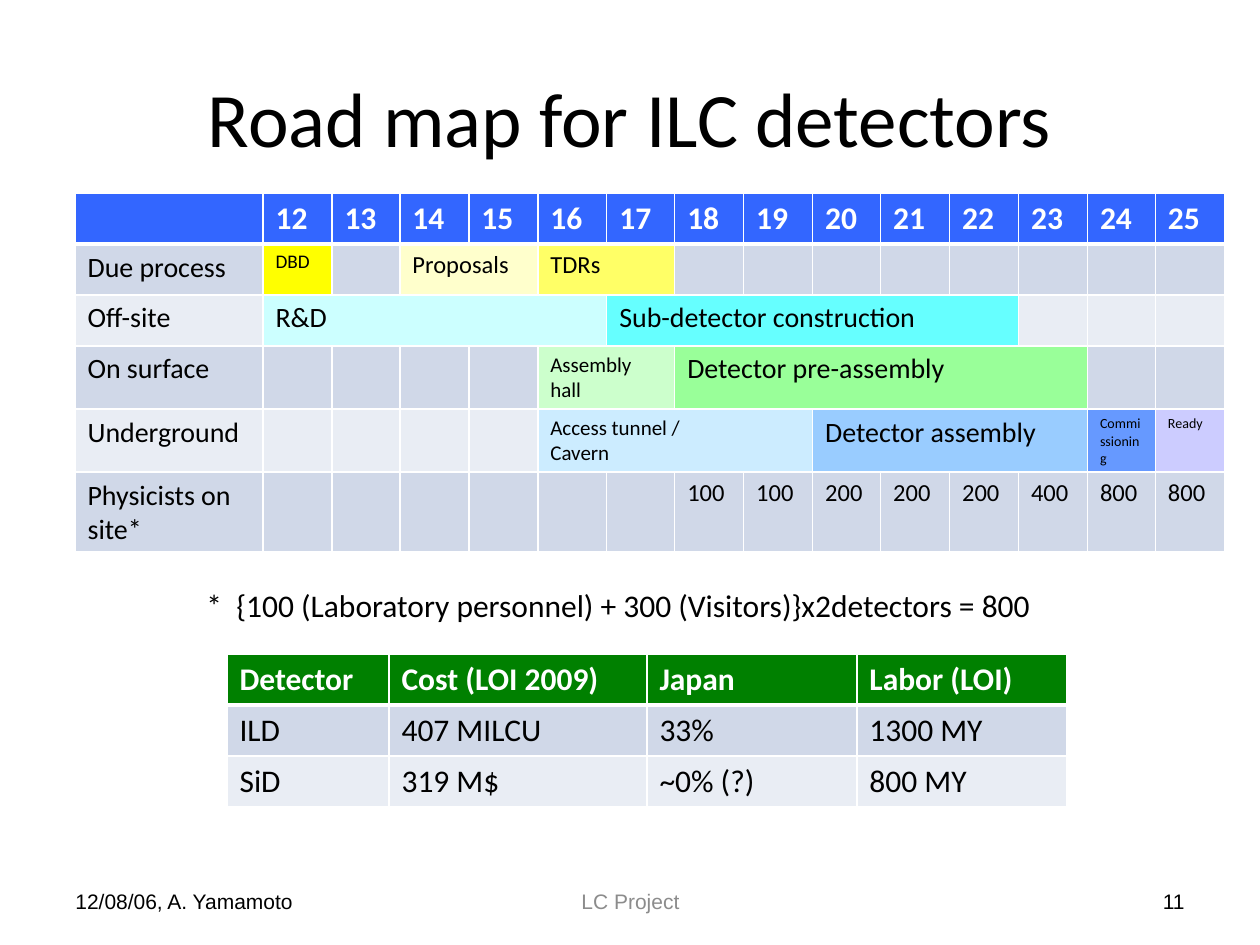
from pptx import Presentation
from pptx.dml.color import RGBColor
from pptx.enum.text import MSO_ANCHOR, PP_ALIGN
from pptx.oxml.ns import qn
from pptx.util import Pt
from lxml.etree import SubElement

EMU_PER_PX = 914400 / 126
COLORS = {
    "white": "FFFFFF", "black": "000000", "grey": "8C8C8C",
    "blue": "3366FF", "green": "008000",
    "band_dark": "D0D8E8", "band_light": "E9EDF4",
    "dbd": "FFFF00", "proposals": "FFFFCC", "tdrs": "FFFF66",
    "rd": "CCFFFF", "construction": "66FFFF",
    "hall": "CCFFCC", "pre_assembly": "99FF99",
    "tunnel": "CCECFF", "assembly": "99CCFF",
    "commissioning": "6699FF", "ready": "CCCCFF",
}
FIRST_YEAR, LAST_YEAR = 12, 25
ROW_H = 51

# Row label of the road map, with its bars: first year, years, text, size, colour
ROADMAP = [
    ("Due process", [(12, 1, "DBD", 11, "dbd"),
                     (14, 2, "Proposals", 14, "proposals"),
                     (16, 2, "TDRs", 14, "tdrs")]),
    ("Off-site", [(12, 5, "R&D", 16, "rd"),
                  (17, 6, "Sub-detector construction", 16, "construction")]),
    ("On surface", [(16, 2, "Assembly hall", 12, "hall"),
                    (18, 6, "Detector pre-assembly", 16, "pre_assembly")]),
    ("Underground", [(16, 4, "Access tunnel /\nCavern", 12, "tunnel"),
                     (20, 4, "Detector assembly", 16, "assembly"),
                     (24, 1, "Commissioning", 8, "commissioning"),
                     (25, 1, "Ready", 8, "ready")]),
    ("Physicists on site*", [
        (year, 1, str(count), 14, "band_dark")
        for year, count in enumerate([100, 100, 200, 200, 200, 400, 800, 800], 18)]),
]
COSTS = [
    ["Detector", "Cost (LOI 2009)", "Japan", "Labor (LOI)"],
    ["ILD", "407 MILCU", "33%", "1300 MY"],
    ["SiD", "319 M$", "~0% (?)", "800 MY"],
]


def px(n):
    return round(n * EMU_PER_PX)


def rgb(name):
    return RGBColor.from_string(COLORS[name])


def write(tf, text, size, color="black", font="Calibri", bold=False, align=PP_ALIGN.LEFT):
    for i, line in enumerate(text.split("\n")):
        p = tf.add_paragraph() if i else tf.paragraphs[0]
        p.alignment = align
        r = p.add_run()
        r.text = line
        r.font.name, r.font.size, r.font.bold = font, Pt(size), bold
        r.font.color.rgb = rgb(color)


def add_text(s, box, text, size, anchor=MSO_ANCHOR.MIDDLE, **style):
    tf = s.shapes.add_textbox(*map(px, box)).text_frame
    tf.word_wrap = True
    tf.vertical_anchor = anchor
    write(tf, text, size, **style)


def set_borders(cell, top, bottom):
    tc_pr = cell._tc.get_or_add_tcPr()
    borders = [("a:lnL", 1), ("a:lnR", 1), ("a:lnT", top), ("a:lnB", bottom)]
    for i, (tag, width) in enumerate(borders):
        ln = SubElement(tc_pr, qn(tag), w=str(Pt(width)))
        fill = SubElement(ln, qn("a:solidFill"))
        SubElement(fill, qn("a:srgbClr"), val=COLORS["white"])
        tc_pr.insert(i, ln)  # borders come before the cell fill


def fill_cell(cell, color):
    cell.fill.solid()
    cell.fill.fore_color.rgb = rgb(color)


def add_grid(s, left, top, widths, n_rows, header_color):
    """Add an empty table with a coloured header and banded rows."""
    box = (left, top, sum(widths), n_rows * ROW_H)
    table = s.shapes.add_table(n_rows, len(widths), *map(px, box)).table
    table.first_row = table.horz_banding = False
    for col, width in zip(table.columns, widths):
        col.width = px(width)
    for i, row in enumerate(table.rows):
        row.height = px(ROW_H)
        color = ("band_dark" if i % 2 else "band_light") if i else header_color
        for cell in row.cells:
            fill_cell(cell, color)
            set_borders(cell, 3 if i == 1 else 1, 1 if i else 3)
    return table


def add_roadmap(s):
    years = range(FIRST_YEAR, LAST_YEAR + 1)
    edges = [round(962 * i / len(years)) for i in range(len(years) + 1)]
    widths = [188] + [b - a for a, b in zip(edges, edges[1:])]
    table = add_grid(s, 75, 193, widths, len(ROADMAP) + 1, "blue")
    for col, year in enumerate(years, 1):
        write(table.cell(0, col).text_frame, str(year), 18, "white", bold=True)
    for row, (label, bars) in enumerate(ROADMAP, 1):
        write(table.cell(row, 0).text_frame, label, 16)
        for year, span, text, size, color in bars:
            col = year - FIRST_YEAR + 1
            cell = table.cell(row, col)
            if span > 1:
                cell.merge(table.cell(row, col + span - 1))
            fill_cell(cell, color)
            write(cell.text_frame, text, size)


def add_costs(s):
    table = add_grid(s, 227, 654, [162, 258, 210, 210], len(COSTS), "green")
    for i, values in enumerate(COSTS):
        for j, text in enumerate(values):
            color = "black" if i else "white"
            write(table.cell(i, j).text_frame, text, 18, color, bold=i == 0)


def add_footer(s):
    for left, width, text, color, align in [
            (63, 294, "12/08/06, A. Yamamoto", "black", PP_ALIGN.LEFT),
            (431, 399, "LC Project", "grey", PP_ALIGN.CENTER),
            (903, 294, "11", "black", PP_ALIGN.RIGHT)]:
        add_text(s, (left, 876, width, 50), text, 12, color=color, font="Arial", align=align)


def main():
    prs = Presentation()
    prs.slide_width, prs.slide_height = px(1260), px(945)
    s = prs.slides.add_slide(prs.slide_layouts[6])
    # Title
    add_text(s, (63, 38, 1134, 157), "Road map for ILC detectors", 44, align=PP_ALIGN.CENTER)
    # Schedule by year, with its footnote
    add_roadmap(s)
    add_text(s, (194, 580, 936, 50),
             "*  {100 (Laboratory personnel) + 300 (Visitors)}x2detectors = 800",
             18, anchor=MSO_ANCHOR.TOP)
    # Cost and labor per detector
    add_costs(s)
    add_footer(s)
    prs.save("out.pptx")


if __name__ == "__main__":
    main()
